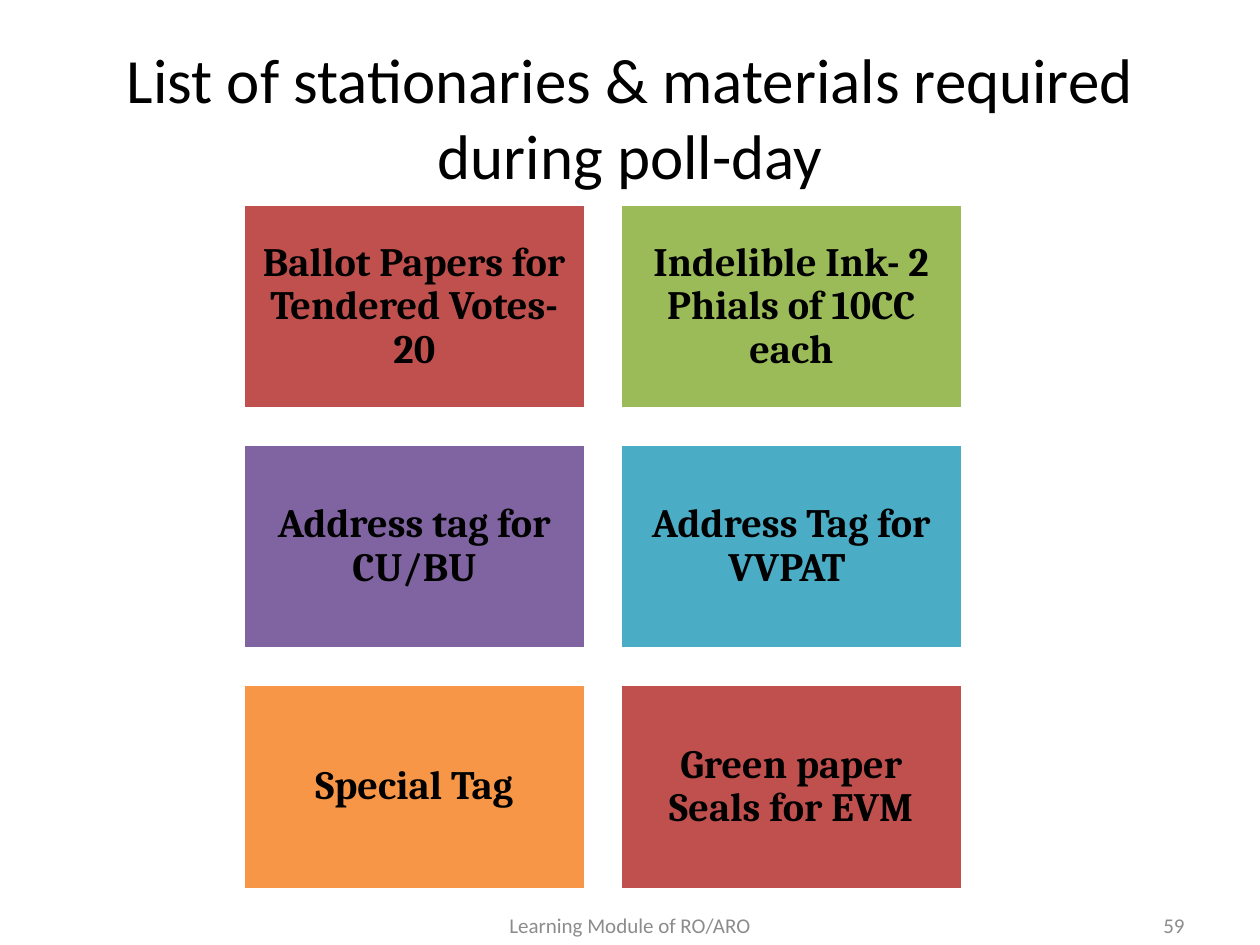
from pptx import Presentation
from pptx import util as u
from pptx.dml.color import RGBColor
from pptx.enum import shapes, text

COLOURS = {
    "red": "C0504D", "green": "9BBB59", "purple": "8064A2",
    "blue": "4BACC6", "orange": "F79646",
    "ink": "000000", "grey": "8C8C8C", "white": "FFFFFF",
}

MATERIALS = [
    ("Ballot Papers for Tendered Votes- 20", "red"),
    ("Indelible Ink- 2 Phials of 10CC each", "green"),
    ("Address tag for CU/BU", "purple"),
    ("Address Tag for VVPAT ", "blue"),
    ("Special Tag", "orange"),
    ("Green paper Seals for EVM", "red"),
]
COLUMNS = 2
GRID_LEFT, GRID_TOP = 4.9, 4.11
CARD_WIDTH, CARD_HEIGHT = 6.91, 4.14
COLUMN_STEP, ROW_STEP = 7.6, 4.84


def colour(name):
    return RGBColor.from_string(COLOURS[name])


class PollDaySlide:
    """Holds the style and the slide; lengths are in centimetres."""

    heading_font = "Calibri"
    card_font = "Cambria"

    def __init__(self, prs):
        self.slide = prs.slides.add_slide(prs.slide_layouts[5])

    def set_words(self, frame, words, font, size, ink, align, bold=False):
        frame.word_wrap = True
        frame.vertical_anchor = text.MSO_ANCHOR.MIDDLE
        paragraph = frame.paragraphs[0]
        paragraph.text = words
        paragraph.alignment = align
        paragraph.font.name = font
        paragraph.font.size = u.Pt(size)
        paragraph.font.bold = bold
        paragraph.font.color.rgb = colour(ink)
        return paragraph

    def title(self, words, left, top, width, height):
        heading = self.slide.shapes.title
        heading.left, heading.top = u.Cm(left), u.Cm(top)
        heading.width, heading.height = u.Cm(width), u.Cm(height)
        self.set_words(heading.text_frame, words, self.heading_font, 36, "ink",
                       text.PP_ALIGN.CENTER)

    def card(self, words, fill, left, top):
        card = self.slide.shapes.add_shape(
            shapes.MSO_SHAPE.RECTANGLE,
            u.Cm(left), u.Cm(top), u.Cm(CARD_WIDTH), u.Cm(CARD_HEIGHT))
        card.shadow.inherit = False
        card.fill.solid()
        card.fill.fore_color.rgb = colour(fill)
        card.line.color.rgb = colour("white")
        card.line.width = u.Pt(2)
        frame = card.text_frame
        frame.margin_left = frame.margin_right = u.Cm(0.25)
        frame.margin_top = frame.margin_bottom = u.Cm(0.25)
        label = self.set_words(frame, words, self.card_font, 23, "ink",
                               text.PP_ALIGN.CENTER, bold=True)
        label.line_spacing = 0.9

    def footer(self, words, left, width, align):
        box = self.slide.shapes.add_textbox(
            u.Cm(left), u.Cm(18.14), u.Cm(width), u.Cm(1.01))
        self.set_words(box.text_frame, words, self.heading_font, 12, "grey",
                       align)


def main():
    prs = Presentation()
    prs.slide_width, prs.slide_height = u.Cm(25.4), u.Cm(19.05)
    page = PollDaySlide(prs)

    page.title("List of stationaries & materials required during poll-day",
               1.27, 0.76, 22.86, 3.18)
    for index, (material, fill) in enumerate(MATERIALS):
        row, column = divmod(index, COLUMNS)
        page.card(material, fill,
                  GRID_LEFT + column * COLUMN_STEP, GRID_TOP + row * ROW_STEP)
    page.footer("Learning Module of RO/ARO", 8.68, 8.04, text.PP_ALIGN.CENTER)
    page.footer("59", 18.2, 5.93, text.PP_ALIGN.RIGHT)

    prs.save("out.pptx")


if __name__ == "__main__":
    main()
